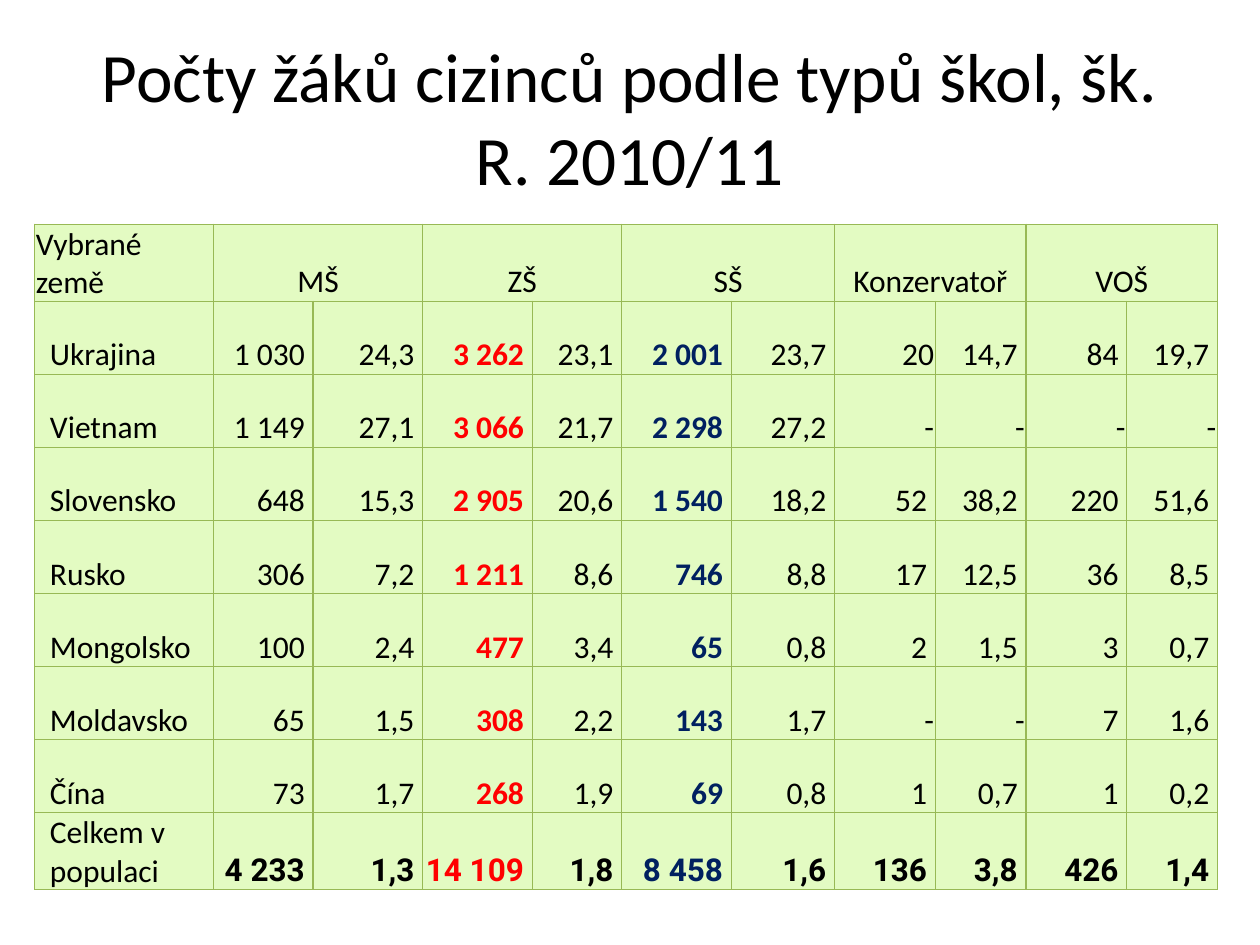
from lxml.etree import SubElement
from pptx import Presentation
from pptx.dml.color import RGBColor as Color
from pptx.enum.text import MSO_ANCHOR as Anchor, PP_ALIGN as Align
from pptx.oxml.ns import qn
from pptx.util import Pt

TITLE = "Počty žáků cizinců podle typů škol, šk. R. 2010/11"
CORNER = "Vybrané země"
SCHOOLS = ["MŠ", "ZŠ", "SŠ", "Konzervatoř", "VOŠ"]
ROWS = [
    ("Ukrajina", "1 030", "24,3", "3 262", "23,1", "2 001", "23,7", "20", "14,7", "84", "19,7"),
    ("Vietnam", "1 149", "27,1", "3 066", "21,7", "2 298", "27,2", "-", "-", "-", "-"),
    ("Slovensko", "648", "15,3", "2 905", "20,6", "1 540", "18,2", "52", "38,2", "220", "51,6"),
    ("Rusko", "306", "7,2", "1 211", "8,6", "746", "8,8", "17", "12,5", "36", "8,5"),
    ("Mongolsko", "100", "2,4", "477", "3,4", "65", "0,8", "2", "1,5", "3", "0,7"),
    ("Moldavsko", "65", "1,5", "308", "2,2", "143", "1,7", "-", "-", "7", "1,6"),
    ("Čína", "73", "1,7", "268", "1,9", "69", "0,8", "1", "0,7", "1", "0,2"),
    ("Celkem v populaci", "4 233", "1,3", "14 109", "1,8", "8 458", "1,6", "136", "3,8", "426", "1,4"),
]
COLORS = {"text": "000000", "primary": "FF0000", "secondary": "002060",
          "cell": "E3FBC2", "border": "98B955"}
COLUMN_COLORS = {3: "primary", 5: "secondary"}
COLUMN_WIDTHS = [102.24, 56.88, 62.64, 62.64, 51.12, 62.64, 59.04, 57.6, 51.84, 57.6, 51.84]
HEADER_HEIGHT, ROW_HEIGHT = 38.88, 41.76
EDGE, NAME_INDENT, NUMBER_GAP = 0.75, 8.75, 4.75


def write(frame, text, align, size=18, color="text", bold=False, font="Calibri"):
    paragraph = frame.paragraphs[0]
    paragraph.alignment = align
    run = paragraph.add_run()
    run.text = text
    values = {"name": font, "size": Pt(size), "bold": bold}
    for name, value in values.items():
        setattr(run.font, name, value)
    run.font.color.rgb = Color.from_string(COLORS[color])


def style_cell(cell, left=EDGE, right=EDGE):
    values = {"margin_left": Pt(left), "margin_right": Pt(right), "margin_top": Pt(EDGE),
              "margin_bottom": Pt(0), "vertical_anchor": Anchor.BOTTOM}
    for name, value in values.items():
        setattr(cell, name, value)
    properties = cell._tc.get_or_add_tcPr()
    for side in ("lnL", "lnR", "lnT", "lnB"):
        line = SubElement(properties, qn(f"a:{side}"), w=str(Pt(0.75)))
        fill = SubElement(line, qn("a:solidFill"))
        SubElement(fill, qn("a:srgbClr"), val=COLORS["border"])
    cell.fill.solid()
    cell.fill.fore_color.rgb = Color.from_string(COLORS["cell"])


def add_title(slide):
    box = slide.shapes.add_textbox(Pt(36), Pt(21.6), Pt(648), Pt(90))
    box.text_frame.word_wrap = True
    box.text_frame.vertical_anchor = Anchor.MIDDLE
    write(box.text_frame, TITLE, Align.CENTER, size=39.6)


def fill_header(table):
    style_cell(table.cell(0, 0))
    write(table.cell(0, 0).text_frame, CORNER, Align.LEFT)
    for index, school in enumerate(SCHOOLS):
        first, second = (table.cell(0, 2 * index + offset) for offset in (1, 2))
        first.merge(second)
        for cell in (first, second):
            style_cell(cell)
        write(first.text_frame, school, Align.CENTER)


def fill_rows(table):
    for row, (country, *numbers) in enumerate(ROWS, 1):
        total = row == len(ROWS)
        name_cell = table.cell(row, 0)
        style_cell(name_cell, left=NAME_INDENT)
        write(name_cell.text_frame, country, Align.LEFT)
        for column, number in enumerate(numbers, 1):
            cell = table.cell(row, column)
            flush = number in ("-", "20")
            style_cell(cell, right=EDGE if flush else NUMBER_GAP)
            write(cell.text_frame, number, Align.RIGHT,
                  color=COLUMN_COLORS.get(column, "text"),
                  bold=total or column in COLUMN_COLORS,
                  font="Roboto" if total else "Calibri")


def add_school_table(slide):
    heights = [HEADER_HEIGHT] + [ROW_HEIGHT] * len(ROWS)
    frame = slide.shapes.add_table(len(heights), len(COLUMN_WIDTHS), Pt(19.8), Pt(128.16),
                                   Pt(sum(COLUMN_WIDTHS)), Pt(sum(heights)))
    table = frame.table
    for column, width in zip(table.columns, COLUMN_WIDTHS):
        column.width = Pt(width)
    for row, height in zip(table.rows, heights):
        row.height = Pt(height)
    fill_header(table)
    fill_rows(table)


def main():
    presentation = Presentation()
    presentation.slide_width, presentation.slide_height = Pt(720), Pt(540)
    slide = presentation.slides.add_slide(presentation.slide_layouts[6])
    add_title(slide)
    add_school_table(slide)
    presentation.save("out.pptx")


if __name__ == "__main__":
    main()
